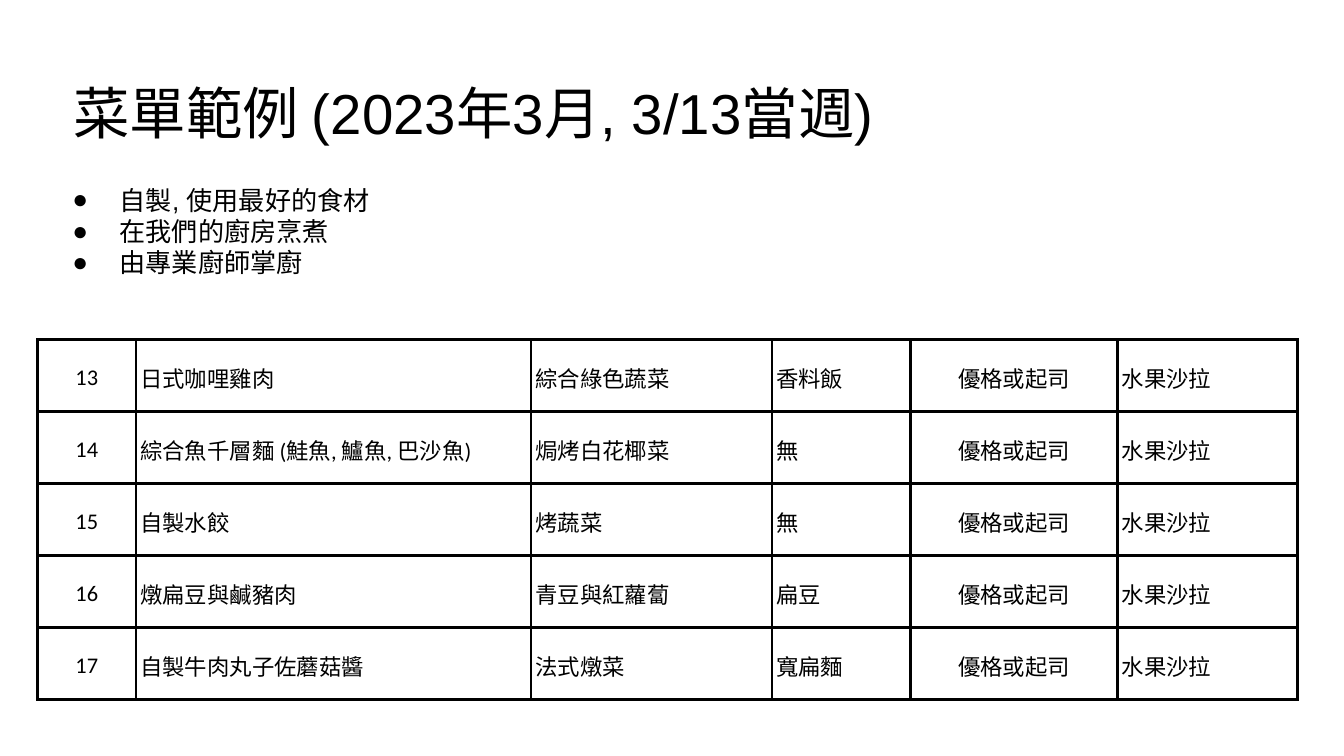
from dataclasses import dataclass

from lxml import etree
from pptx import Presentation
from pptx.dml.color import RGBColor
from pptx.enum.text import MSO_ANCHOR, MSO_AUTO_SIZE, PP_ALIGN
from pptx.oxml.ns import qn
from pptx.util import Cm, Pt

LEFT, CENTER = PP_ALIGN.LEFT, PP_ALIGN.CENTER
TOP, MIDDLE = MSO_ANCHOR.TOP, MSO_ANCHOR.MIDDLE
FIXED, GROW = MSO_AUTO_SIZE.NONE, MSO_AUTO_SIZE.SHAPE_TO_FIT_TEXT


@dataclass(frozen=True)
class Theme:
    ink: str = "000000"
    paper: str = "FFFFFF"
    text_font: str = "Arial"
    table_font: str = "Calibri"
    title_size: float = 30.2
    list_size: float = 14
    table_size: float = 12
    border_width: float = 1.5


THEME = Theme()
TITLE = "菜單範例 (2023年3月, 3/13當週)"
PROMISES = ["自製, 使用最好的食材", "在我們的廚房烹煮", "由專業廚師掌廚"]
DAIRY, DESSERT = "優格或起司", "水果沙拉"
MENU = [
    ("13", "日式咖哩雞肉", "綜合綠色蔬菜", "香料飯"),
    ("14", "綜合魚千層麵 (鮭魚, 鱸魚, 巴沙魚)", "焗烤白花椰菜", "無"),
    ("15", "自製水餃", "烤蔬菜", "無"),
    ("16", "燉扁豆與鹹豬肉", "青豆與紅蘿蔔", "扁豆"),
    ("17", "自製牛肉丸子佐蘑菇醬", "法式燉菜", "寬扁麵"),
]
COLUMN_WIDTHS = [0.71, 0.79, 1.07, 7.47, 4.55, 2.62, 3.91, 3.4]
MARGIN_ROW, MENU_ROW = 0.86, 1.36
DAY_COLUMN, DAIRY_COLUMN = 1, 6


def style_font(para, name, size):
    para.font.name = name
    para.font.size = Pt(size)
    para.font.color.rgb = RGBColor.from_string(THEME.ink)


def prepare_placeholder(shape, box, fit):
    shape.left, shape.top, shape.width, shape.height = map(Cm, box)
    frame = shape.text_frame
    frame.word_wrap = True
    frame.auto_size = fit
    frame.vertical_anchor = TOP
    frame.margin_left = frame.margin_right = Cm(0.25)
    frame.margin_top = frame.margin_bottom = Cm(0.25)
    return frame


def add_title(page, box):
    frame = prepare_placeholder(page.shapes.title, box, FIXED)
    frame.text = TITLE
    para = frame.paragraphs[0]
    para.alignment = LEFT
    style_font(para, THEME.text_font, THEME.title_size)


def add_bullet(para):
    props = para._p.get_or_add_pPr()
    props.set("marL", str(Cm(1.27)))
    props.set("indent", str(-Cm(0.89)))
    color = etree.SubElement(props, qn("a:buClr"))
    etree.SubElement(color, qn("a:srgbClr"), val=THEME.ink)
    etree.SubElement(props, qn("a:buFont"), typeface=THEME.text_font)
    etree.SubElement(props, qn("a:buChar"), char="●")


def add_promises(page, box):
    frame = prepare_placeholder(page.placeholders[1], box, GROW)
    frame.text = "\n".join(PROMISES)
    for para in frame.paragraphs:
        add_bullet(para)
        para.space_before = Pt(0)
        style_font(para, THEME.text_font, THEME.list_size)


def add_borders(cell, sides):
    props = cell._tc.get_or_add_tcPr()
    for side in "LRTB":
        visible = side in sides
        width = Pt(THEME.border_width) if visible else 0
        line = etree.SubElement(props, qn(f"a:ln{side}"), w=str(width))
        if visible:
            fill = etree.SubElement(line, qn("a:solidFill"))
            etree.SubElement(fill, qn("a:srgbClr"), val=THEME.ink)
        else:
            etree.SubElement(line, qn("a:noFill"))


def format_cell(cell, text, sides, alignment):
    add_borders(cell, sides)
    cell.fill.solid()
    cell.fill.fore_color.rgb = RGBColor.from_string(THEME.paper)
    cell.margin_left = cell.margin_right = Cm(0.08)
    cell.margin_top = cell.margin_bottom = Cm(0.05)
    cell.vertical_anchor = MIDDLE
    cell.text = text
    para = cell.text_frame.paragraphs[0]
    para.alignment = alignment
    para.line_spacing = 1.15
    style_font(para, THEME.table_font, THEME.table_size)


def cell_sides(row, column):
    if row and column:
        return "LRTB"
    if row:
        return "R"
    return "B" if column else ""


def add_menu(page, box):
    rows = [[""] * len(COLUMN_WIDTHS)]
    rows += [["", day, "", *dishes, DAIRY, DESSERT] for day, *dishes in MENU]
    table = page.shapes.add_table(len(rows), len(COLUMN_WIDTHS), *map(Cm, box)).table
    table.first_row = table.horz_banding = False
    for column, width in zip(table.columns, COLUMN_WIDTHS):
        column.width = Cm(width)
    for row_index, texts in enumerate(rows):
        table.rows[row_index].height = Cm(MENU_ROW if row_index else MARGIN_ROW)
        for column_index, text in enumerate(texts):
            centered = column_index in (DAY_COLUMN, DAIRY_COLUMN)
            format_cell(table.cell(row_index, column_index), text,
                        cell_sides(row_index, column_index),
                        CENTER if centered else LEFT)
        if row_index:
            day_cell = table.cell(row_index, DAY_COLUMN)
            day_cell.merge(table.cell(row_index, DAY_COLUMN + 1))


def main():
    deck = Presentation()
    deck.slide_width, deck.slide_height = Cm(25.4), Cm(14.29)
    page = deck.slides.add_slide(deck.slide_layouts[1])
    add_menu(page, (0, 5.56, sum(COLUMN_WIDTHS), MARGIN_ROW + len(MENU) * MENU_ROW))
    add_title(page, (1.14, 1.22, 23.67, 1.6))
    add_promises(page, (0.74, 3.23, 16.36, 2.31))
    deck.save("out.pptx")


if __name__ == "__main__":
    main()
